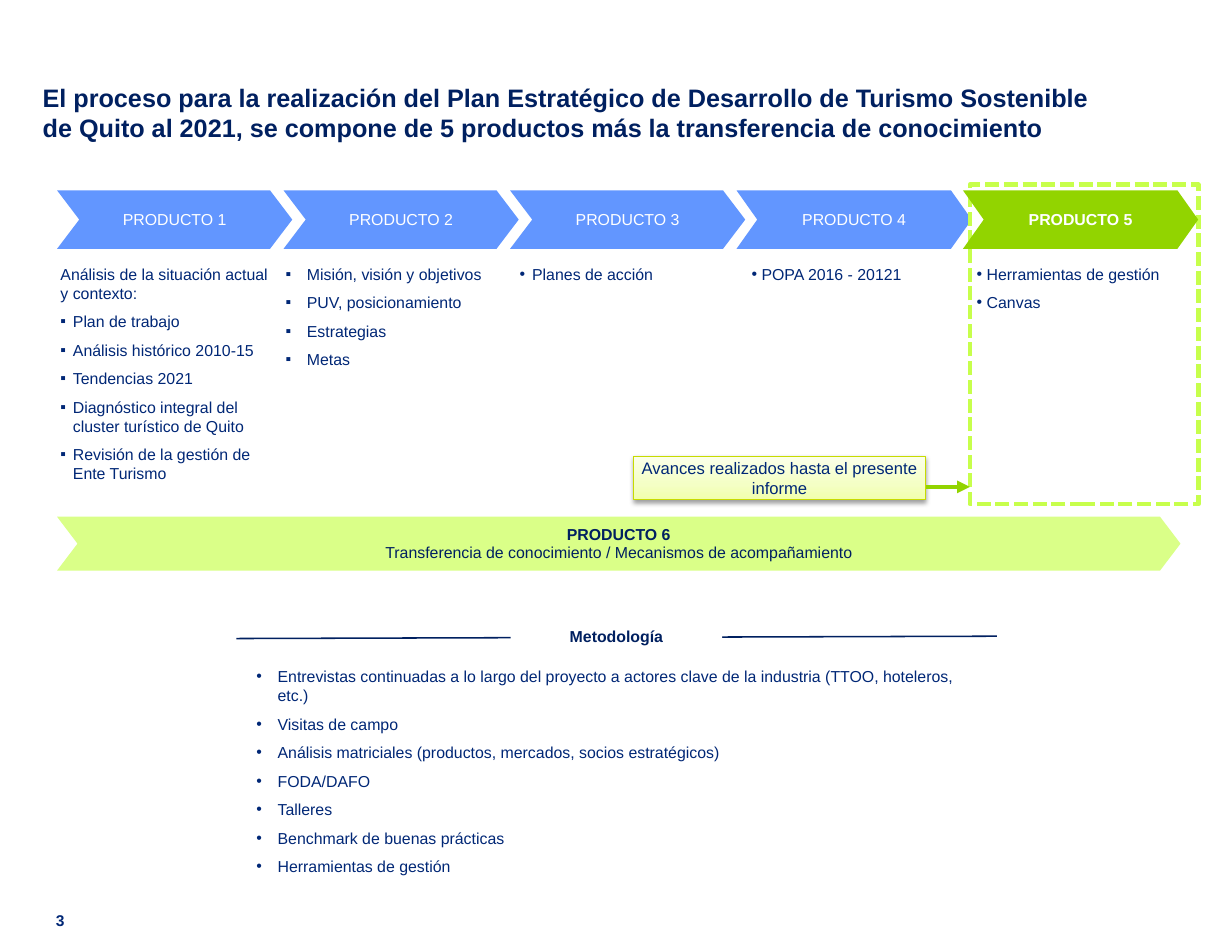
from lxml import etree
from pptx import Presentation
from pptx.dml.color import RGBColor
from pptx.enum import dml, shapes, text
from pptx.oxml import ns
from pptx.util import Pt

NAVY = RGBColor(0x00, 0x20, 0x60)
BLUE = RGBColor(0x00, 0x27, 0x76)
SKY = RGBColor(0x62, 0x96, 0xFF)
GREEN = RGBColor(0x92, 0xD4, 0x00)
LIME = RGBColor(0xC7, 0xFF, 0x4C)
PALE = RGBColor(0xDA, 0xFF, 0x88)
OLIVE = RGBColor(0xC7, 0xDB, 0x00)
WHITE = RGBColor(0xFF, 0xFF, 0xFF)
CALLOUT_STOPS = [(0, RGBColor(0xF1, 0xFF, 0xAC)), (35000, RGBColor(0xF4, 0xFF, 0xC5)),
                 (100000, RGBColor(0xFB, 0xFF, 0xE9))]

CENTER = text.PP_ALIGN.CENTER
MIDDLE = text.MSO_ANCHOR.MIDDLE
BODY = 10.2
PITCH = 145.6
PRODUCTS = [
    ("PRODUCTO 1", 1.5, 141, 8, "▪", [
        "Plan de trabajo", "Análisis histórico 2010-15", "Tendencias 2021",
        "Diagnóstico integral del cluster turístico de Quito",
        "Revisión de la gestión de Ente Turismo"]),
    ("PRODUCTO 2", 0.6, 146, 13.7, "▪", [
        "Misión, visión y objetivos", "PUV, posicionamiento", "Estrategias", "Metas"]),
    ("PRODUCTO 3", 5.5, 142, 8, "•", ["Planes de acción"]),
    ("PRODUCTO 4", 8.9, 142, 6.5, "•", ["POPA 2016 - 20121"]),
    ("PRODUCTO 5", 8, 142, 6.5, "•", ["Herramientas de gestión", "Canvas"]),
]
METHODS = [
    "Entrevistas continuadas a lo largo del proyecto a actores clave de la industria "
    "(TTOO, hoteleros, etc.)",
    "Visitas de campo", "Análisis matriciales (productos, mercados, socios estratégicos)",
    "FODA/DAFO", "Talleres", "Benchmark de buenas prácticas", "Herramientas de gestión",
]


def child(parent, tag, **attrs):
    return etree.SubElement(parent, ns.qn(tag), attrs)


def set_frame(tf, dx=0, dy=0, anchor=text.MSO_ANCHOR.TOP):
    tf.word_wrap = True
    tf.margin_left = tf.margin_right = Pt(dx)
    tf.margin_top = tf.margin_bottom = Pt(dy)
    tf.vertical_anchor = anchor


def write(tf, lines, size, color, bold=False, align=None, spacing=None, after=None,
          bullet=None, indent=0):
    for i, line in enumerate(lines):
        p = tf.paragraphs[0] if i == 0 and not tf.text else tf.add_paragraph()
        p.text = line
        if bullet:
            props = p._p.get_or_add_pPr()
            props.set("marL", str(Pt(indent)))
            props.set("indent", str(-Pt(indent)))
            child(props, "a:buFont", typeface="Arial")
            child(props, "a:buChar", char=bullet)
        p.font.size, p.font.name, p.font.bold = Pt(size), "Arial", bold
        p.font.color.rgb = color
        if align is not None:
            p.alignment = align
        if spacing is not None:
            p.line_spacing = spacing
        if after is not None:
            p.space_after = Pt(after)


def add_text(s, box, inset=0):
    tf = s.shapes.add_textbox(*map(Pt, box)).text_frame
    set_frame(tf, inset, inset)
    return tf


def add_shape(s, kind, box, fill=None):
    sp = s.shapes.add_shape(kind, *map(Pt, box))
    sp.shadow.inherit = False
    sp.line.fill.background()
    if fill is None:
        sp.fill.background()
    else:
        sp.fill.solid()
        sp.fill.fore_color.rgb = fill
    return sp


def add_line(s, start, end, color, width):
    ln = s.shapes.add_connector(shapes.MSO_CONNECTOR.STRAIGHT, *map(Pt, start + end))
    ln.line.color.rgb, ln.line.width = color, Pt(width)
    child(ln._element.spPr, "a:effectLst")
    return ln


def add_chevron(s, box, fill, point=0.38):
    sp = add_shape(s, shapes.MSO_SHAPE.CHEVRON, box, fill)
    sp.adjustments[0] = point
    set_frame(sp.text_frame, 3, 3.6, MIDDLE)
    return sp.text_frame


def add_header(s, box):
    write(add_text(s, box), [
        "El proceso para la realización del Plan Estratégico de Desarrollo de Turismo "
        "Sostenible de Quito al 2021, se compone de 5 productos más la transferencia de "
        "conocimiento"], 16.2, NAVY, bold=True)


def add_product(s, left, top, product, current=False):
    name, dx, width, indent, bullet, items = product
    point = 0.355 if name in ("PRODUCTO 4", "PRODUCTO 5") else 0.38
    tf = add_chevron(s, (left, top, 151.2, 37.6), GREEN if current else SKY, point)
    write(tf, [name], BODY, WHITE, bold=current, align=CENTER)
    tf = add_text(s, (left + dx, top + 46.8, width, 20 * len(items)), 0.7)
    if name == "PRODUCTO 1":
        write(tf, ["Análisis de la situación actual y contexto:"], BODY, BLUE, after=6.1)
    write(tf, items, BODY, BLUE, after=6.1, bullet=bullet, indent=indent)


def add_focus(s, box):
    sp = add_shape(s, shapes.MSO_SHAPE.RECTANGLE, box)
    sp.line.color.rgb, sp.line.width = LIME, Pt(3)
    sp.line.dash_style = dml.MSO_LINE.SQUARE_DOT


def add_callout(s, box, target):
    left, top, width, height = box
    sp = add_shape(s, shapes.MSO_SHAPE.RECTANGLE, box)
    sp.fill.gradient()
    sp.fill.gradient_angle = 90
    stops = sp._element.spPr.find(ns.qn("a:gradFill")).find(ns.qn("a:gsLst"))
    for stop in list(stops):
        stops.remove(stop)
    for pos, color in CALLOUT_STOPS:
        child(child(stops, "a:gs", pos=str(pos)), "a:srgbClr", val=str(color))
    sp.line.color.rgb, sp.line.width = OLIVE, Pt(0.75)
    effects = sp._element.spPr.find(ns.qn("a:effectLst"))
    shadow = child(effects, "a:outerShdw", blurRad=str(Pt(3.1)), dist=str(Pt(1.6)),
                   dir="5400000", rotWithShape="0")
    child(child(shadow, "a:srgbClr", val="000000"), "a:alpha", val="38000")
    set_frame(sp.text_frame, 0.7, 0.7)
    write(sp.text_frame, ["Avances realizados hasta el presente informe"], 10.7, BLUE,
          align=CENTER, after=3)
    y = top + height - 8
    arrow = add_line(s, (left + width, y), (target, y), GREEN, 2.75)
    child(arrow.line._get_or_add_ln(), "a:tailEnd", type="triangle")


def add_transfer(s, box):
    tf = add_chevron(s, box, PALE)
    write(tf, ["PRODUCTO 6"], BODY, NAVY, bold=True, align=CENTER, spacing=0.95)
    write(tf, ["Transferencia de conocimiento / Mecanismos de acompañamiento"], BODY, NAVY,
          align=CENTER, spacing=0.95)


def add_methodology(s, box):
    left, top, width, height = box
    add_line(s, (left, top + 6.5), (left + width, top + 5), NAVY, 1)
    sp = add_shape(s, shapes.MSO_SHAPE.RECTANGLE, (left + 176.4, top, 136, 11.5), WHITE)
    set_frame(sp.text_frame, 5.8, 0, text.MSO_ANCHOR.BOTTOM)
    write(sp.text_frame, ["Metodología"], BODY, NAVY, bold=True, align=CENTER, spacing=0.95)
    tf = add_text(s, (left + 12.2, top + 23.8, width - 18, height - 23.8), 0.7)
    write(tf, METHODS, BODY, BLUE, after=6.1, bullet="•", indent=13.7)


def add_footer(s, box):
    write(add_text(s, box), ["3"], 10, BLUE, bold=True, spacing=Pt(12))


def main():
    prs = Presentation()
    prs.slide_width, prs.slide_height = Pt(792), Pt(612)
    s = prs.slides.add_slide(prs.slide_layouts[6])
    add_header(s, (27.4, 52.6, 685.4, 50.4))
    add_footer(s, (36, 585.4, 24.5, 13))
    add_methodology(s, (151.9, 404, 488.9, 147.6))
    left, top = 36.7, 122.4
    for i, product in enumerate(PRODUCTS[:-1]):
        add_product(s, left + i * PITCH, top, product)
    add_focus(s, (623.5, 118.8, 146.9, 205.2))
    add_callout(s, (407.3, 293.6, 187.7, 27.4), 623.5)
    add_product(s, left + 4 * PITCH, top, PRODUCTS[-1], current=True)
    add_transfer(s, (left, 332.2, 722.2, 34.6))
    prs.save("out.pptx")


if __name__ == "__main__":
    main()
